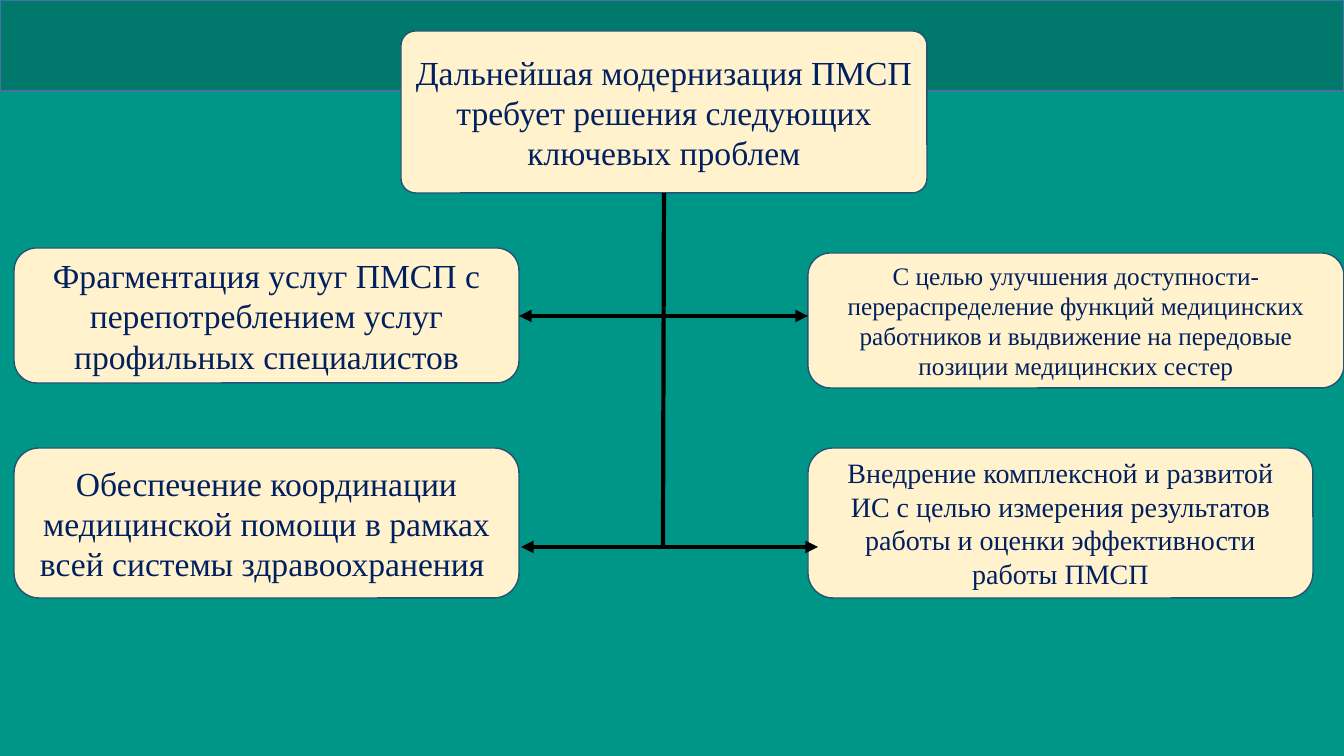
"""Build the slide on the key problems of modernising primary care."""
from pptx import Presentation
from pptx import util as u
from pptx.dml.color import RGBColor
from pptx.enum import shapes, text
from pptx.oxml.ns import qn
from lxml import etree

SCALE = 9144000 / 1008
WIDTH, HEIGHT = 1344, 756
FONT = "Times New Roman"
TEAL, DARK_TEAL, CREAM = "009687", "00786C", "FFF2CC"
NAVY, EDGE, BAND_EDGE, BLACK = "002060", "225374", "43739E", "000000"

HEADING = "Дальнейшая модернизация ПМСП требует решения следующих ключевых проблем"
HEADING_AREA = (401, 31, 526, 162)
PROBLEMS = [
    ("Фрагментация услуг ПМСП с перепотреблением услуг профильных специалистов",
     (14, 248, 505, 135), 24),
    ("Обеспечение координации медицинской помощи в рамках всей системы здравоохранения ",
     (14, 448, 505, 150), 24),
    ("С целью улучшения доступности- перераспределение функций медицинских "
     "работников и выдвижение на передовые позиции медицинских сестер",
     (808, 253, 536, 135), 18),
    ("Внедрение комплексной и развитой ИС с целью измерения результатов "
     "работы и оценки эффективности работы ПМСП",
     (808, 448, 505, 150), 20),
]
TRUNK = (664, 193, 663, 547)
BRANCHES = [(316, 519, 808), (547, 521, 818)]


def px(length):
    return u.Emu(round(length * SCALE))


def color(value):
    return RGBColor.from_string(value)


def write(box, words, size):
    frame = box.text_frame
    frame.text = words
    frame.word_wrap = True
    frame.auto_size = text.MSO_AUTO_SIZE.NONE
    frame.vertical_anchor = text.MSO_ANCHOR.MIDDLE
    para = frame.paragraphs[0]
    para.alignment = text.PP_ALIGN.CENTER
    para.font.name, para.font.size = FONT, u.Pt(size)
    para.font.color.rgb = color(NAVY)


def add_panel(kind, area, fill, edge):
    panel = page.shapes.add_shape(kind, *map(px, area))
    panel.shadow.inherit = False
    panel.fill.solid()
    panel.fill.fore_color.rgb = color(fill)
    panel.line.color.rgb = color(edge)
    panel.line.width = u.Pt(1)
    return panel


def add_line(ends, arrow=False):
    line = page.shapes.add_connector(shapes.MSO_CONNECTOR.STRAIGHT, *map(px, ends))
    line.line.color.rgb = color(BLACK)
    line.line.width = u.Pt(3)
    if arrow:
        etree.SubElement(line.line._get_or_add_ln(), qn("a:tailEnd"), type="triangle")
    etree.SubElement(line._element.spPr, qn("a:effectLst"))


deck = Presentation()
deck.slide_width, deck.slide_height = px(WIDTH), px(HEIGHT)
page = deck.slides.add_slide(deck.slide_layouts.get_by_name("Title Only"))
page.background.fill.solid()
page.background.fill.fore_color.rgb = color(TEAL)

add_panel(shapes.MSO_SHAPE.RECTANGLE, (0, 0, WIDTH, 91), DARK_TEAL, BAND_EDGE)
heading_panel = add_panel(shapes.MSO_SHAPE.ROUNDED_RECTANGLE, HEADING_AREA, CREAM, EDGE)
heading_panel.adjustments[0] = 0.09

title = page.shapes.title
title.left, title.top, title.width, title.height = map(px, HEADING_AREA)
write(title, HEADING, 24)
page.shapes._spTree.append(title._element)

for words, area, size in PROBLEMS:
    write(add_panel(shapes.MSO_SHAPE.ROUNDED_RECTANGLE, area, CREAM, EDGE), words, size)

add_line(TRUNK)
for y, left, right in BRANCHES:
    for tip in (left, right):
        add_line((TRUNK[0], y, tip, y), arrow=True)

deck.save("out.pptx")
